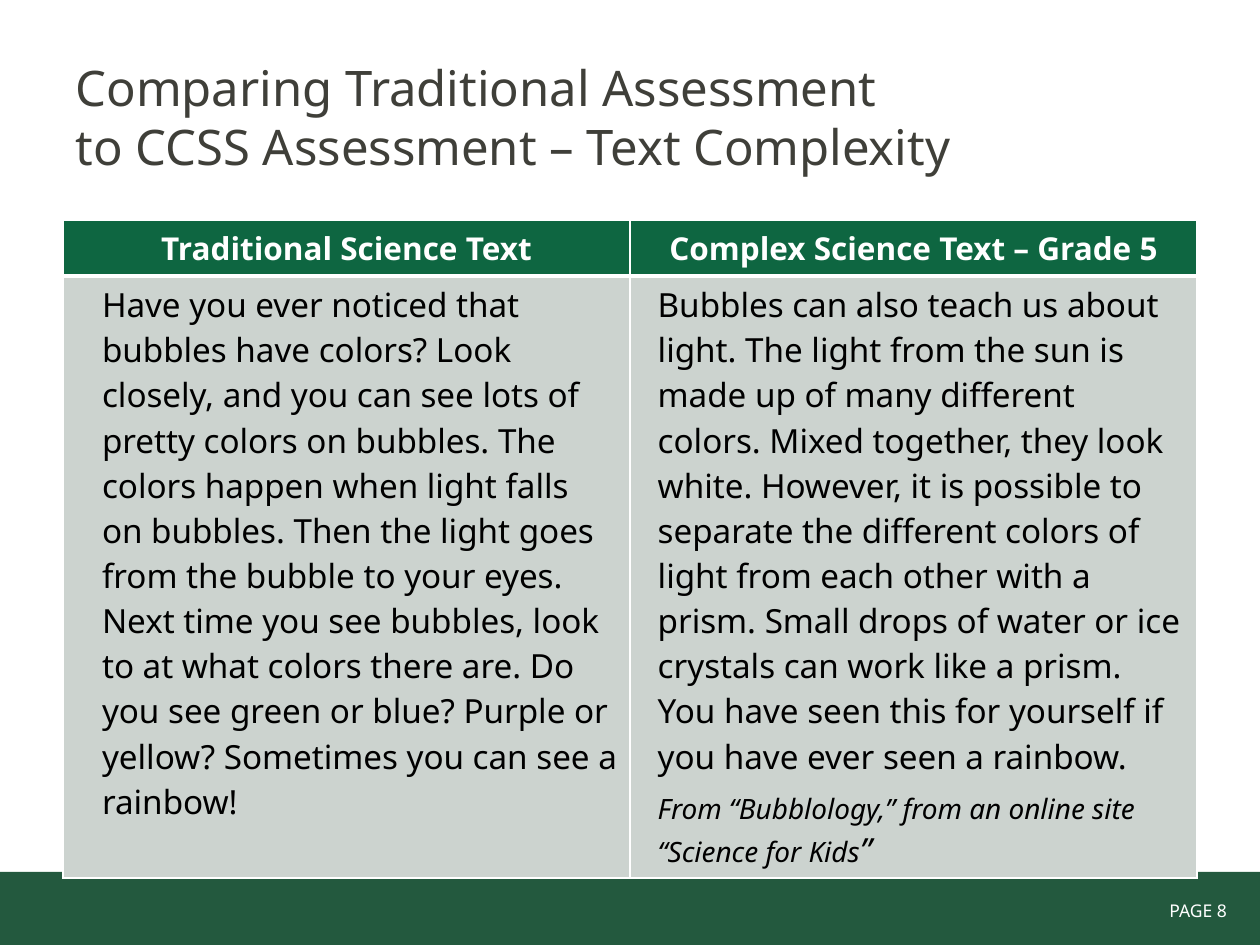
from lxml import etree
from pptx import Presentation
from pptx.dml.color import RGBColor
from pptx.enum.shapes import MSO_SHAPE
from pptx.enum.text import MSO_ANCHOR, MSO_AUTO_SIZE, PP_ALIGN
from pptx.oxml.ns import qn
from pptx.util import Inches, Pt

RECT = MSO_SHAPE.RECTANGLE
MIDDLE = MSO_ANCHOR.MIDDLE
NO_FIT = MSO_AUTO_SIZE.NONE
LEFT, CENTER, RIGHT = PP_ALIGN.LEFT, PP_ALIGN.CENTER, PP_ALIGN.RIGHT

FONT = "Noto Sans"
COLORS = {
    "band": "23593E",
    "header": "0E6641",
    "body": "CCD3CF",
    "title": "3F3F39",
    "text": "000000",
    "white": "FFFFFF",
}
TITLE = "Comparing Traditional Assessment \vto CCSS Assessment – Text Complexity"
HEADERS = ["Traditional Science Text", "Complex Science Text – Grade 5"]
HEADER_HEIGHT = Inches(0.44)
TRADITIONAL = (
    "Have you ever noticed that bubbles have colors? Look closely, and you can see "
    "lots of pretty colors on bubbles. The colors happen when light falls on bubbles. "
    "Then the light goes from the bubble to your eyes. Next time you see bubbles, look "
    "to at what colors there are. Do you see green or blue? Purple or yellow? "
    "Sometimes you can see a rainbow!"
)
COMPLEX = (
    "Bubbles can also teach us about light. The light from the sun is made up of many "
    "different colors. Mixed together, they look white. However, it is possible to "
    "separate the different colors of light from each other with a prism. Small drops "
    "of water or ice crystals can work like a prism. You have seen this for yourself "
    "if you have ever seen a rainbow."
)
SOURCE = "From “Bubblology,” from an online site “Science for Kids"
PLAIN = {"size": Pt(19), "bold": False}
ITALIC = {**PLAIN, "italic": True}
PASSAGES = [
    (0.21, [[(TRADITIONAL, PLAIN)]]),
    (0.12, [[(COMPLEX, PLAIN)], [(SOURCE, {**ITALIC, "size": Pt(16)}), ("”", ITALIC)]]),
]


def rgb(name):
    """Return the named colour."""
    return RGBColor.from_string(COLORS[name])


def set_font(font, color, **values):
    """Apply the slide font, a colour and further font values."""
    font.color.rgb = rgb(color)
    for key, value in {"name": FONT, **values}.items():
        setattr(font, key, value)


def add_title(s, box):
    """Fill and place the title placeholder."""
    sp = s.shapes.title
    sp.left, sp.top, sp.width, sp.height = box
    tf = sp.text_frame
    tf.text = TITLE
    tf.auto_size, tf.vertical_anchor = NO_FIT, MIDDLE
    p = tf.paragraphs[0]
    p.alignment = LEFT
    for r in p.runs:
        set_font(r.font, "title", size=Pt(28))


def add_footer(s, box):
    """Draw the footer band with the page number at its right."""
    left, top, width, height = box
    sp = s.shapes.add_shape(RECT, *box)
    sp.shadow.inherit = False
    sp.fill.solid()
    sp.fill.fore_color.rgb = rgb("band")
    sp.line.fill.background()
    page = s.shapes.add_textbox(
        left + int(width * 0.83), top + int(height * 0.3), int(width * 0.157), Inches(0.27)
    )
    tf = page.text_frame
    tf.word_wrap = True
    p = tf.paragraphs[0]
    p.alignment = RIGHT
    r = p.add_run()
    r.text = "PAGE 8 "
    set_font(r.font, "white", size=Pt(10))


def style_cell(cell, fill, **edges):
    """Give a cell white borders and a solid fill."""
    tc_pr = cell._tc.get_or_add_tcPr()
    for edge in "LRTB":
        ln = etree.SubElement(tc_pr, qn(f"a:ln{edge}"), w=str(Pt(edges.get(edge, 1))))
        paint = etree.SubElement(ln, qn("a:solidFill"))
        etree.SubElement(paint, qn("a:srgbClr"), val=COLORS["white"])
    cell.fill.solid()
    cell.fill.fore_color.rgb = rgb(fill)


def fill_passage(cell, indent, paragraphs):
    """Write indented paragraphs of formatted runs into a cell."""
    tf = cell.text_frame
    for i, runs in enumerate(paragraphs):
        p = tf.add_paragraph() if i else tf.paragraphs[0]
        p._p.get_or_add_pPr().set("marL", str(Inches(indent)))
        p.space_before = Pt(6 if i else 0)
        for text, values in runs:
            r = p.add_run()
            r.text = text
            set_font(r.font, "text", **values)


def add_comparison(s, box):
    """Build the two-column table of science texts."""
    table = s.shapes.add_table(2, len(HEADERS), *box).table
    table.rows[0].height = HEADER_HEIGHT
    table.rows[1].height = box[3] - HEADER_HEIGHT
    for col, (header, passage) in enumerate(zip(HEADERS, PASSAGES)):
        head, body = table.cell(0, col), table.cell(1, col)
        style_cell(head, "header", B=3)
        style_cell(body, "body", T=3)
        head.text = header
        p = head.text_frame.paragraphs[0]
        p.alignment = CENTER
        set_font(p.runs[0].font, "white", size=Pt(18), bold=True)
        fill_passage(body, *passage)


def main():
    """Build and save the slide."""
    prs = Presentation()
    prs.slide_width, prs.slide_height = Inches(10), Inches(7.5)
    w, h = prs.slide_width, prs.slide_height
    s = prs.slides.add_slide(prs.slide_layouts[5])
    margin, inner = int(w * 0.05), int(w * 0.9)
    band = Inches(0.58)
    add_footer(s, (0, h - band, w, band))
    add_title(s, (margin, int(h * 0.04), inner, Inches(1.25)))
    add_comparison(s, (margin, Inches(1.75), inner, Inches(5.22)))
    prs.save("out.pptx")


if __name__ == "__main__":
    main()
